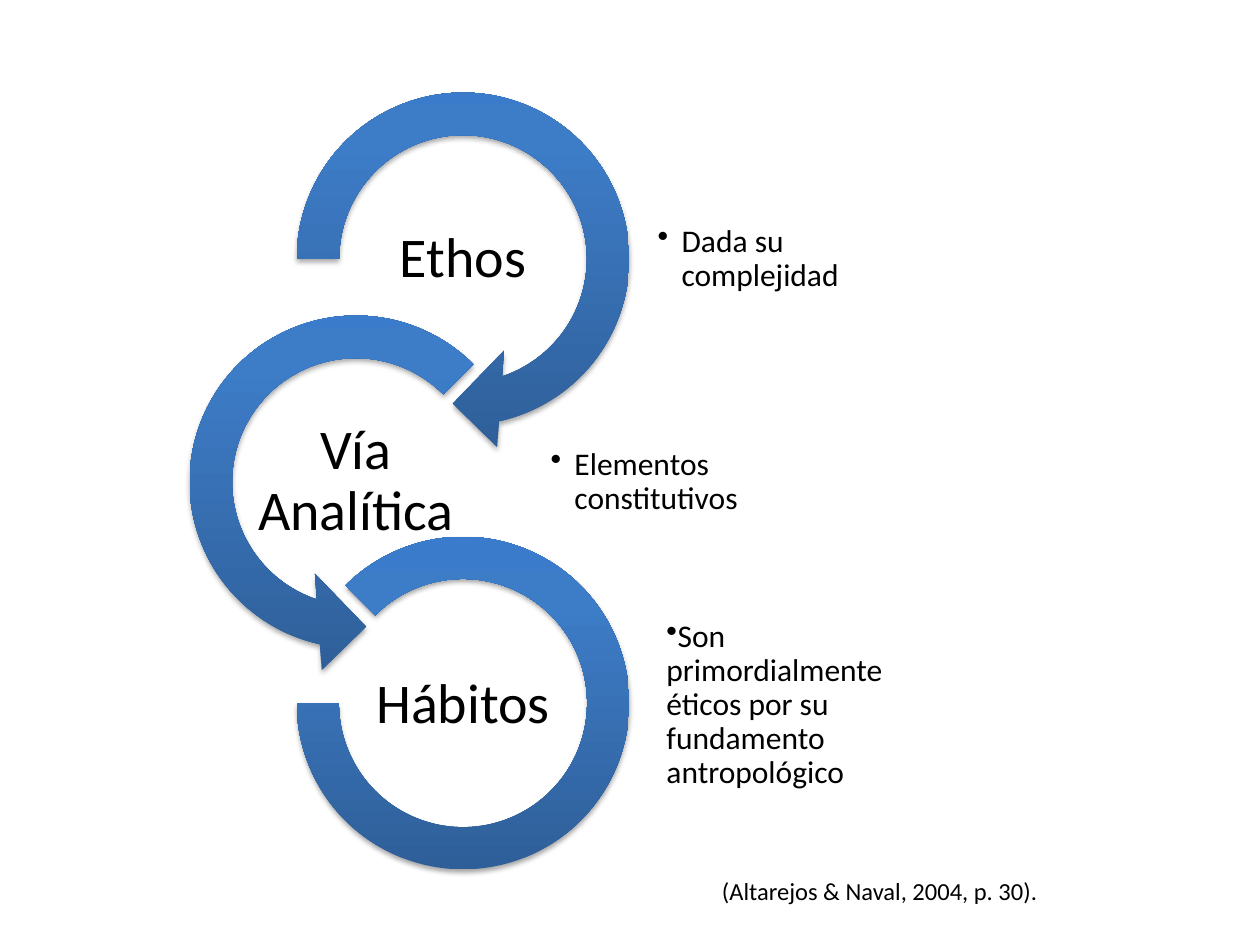
from dataclasses import dataclass

from lxml.etree import SubElement
from pptx import Presentation
from pptx.dml.color import RGBColor
from pptx.enum.shapes import MSO_SHAPE
from pptx.enum.text import MSO_ANCHOR, PP_ALIGN
from pptx.oxml import parse_xml
from pptx.oxml.ns import nsdecls, qn
from pptx.util import Inches, Pt


@dataclass(frozen=True)
class Theme:
    font: str = "Calibri"
    ink: str = "000000"
    gradient: tuple = ((0, "2F5F99"), (80, "3D7CC7"), (100, "3A7CCB"))
    label_size: int = 32
    bullet_size: int = 18
    citation_size: int = 14


THEME = Theme()

# Rows of the chain, in inches: even pitch, middle row shifted left
ROW_TOP, ROW_PITCH = 0.52, 1.77
COLUMN_LEFT, ROW_SHIFT = 2.14, 0.85
RING_SIZE = 3.07
LABEL_OFFSET, LABEL_SIZE = (0.68, 1.11), (1.71, 0.85)
NOTE_TOP, NOTE_HEIGHT = 0.92, 1.23

# Ring kind, adjustments, ring inset, label, note, note (shift, width), (margin, indent)
ROWS = (
    (MSO_SHAPE.CIRCULAR_ARROW, (0.11, 11.423, 45, 108, 0.125), 0,
     "Ethos", "Dada su complejidad", (0, 1.84), (0.19, -0.19)),
    (MSO_SHAPE.LEFT_CIRCULAR_ARROW, (0.11, 11.423, 63, 189, 0.125), 0,
     "Vía Analítica", "Elementos constitutivos", (0, 1.84), (0.19, -0.19)),
    (MSO_SHAPE.BLOCK_ARC, (135, 108, 0.127), 0.215,
     "Hábitos", "Son primordialmente éticos por su fundamento antropológico",
     (-0.05, 1.94), (0.12, 0)),
)


def write_text(frame, text, size, align=PP_ALIGN.LEFT, inset=None, line=None,
               after=None, bullet=False, indents=(0, 0), level=0):
    """Fill a text frame with one formatted paragraph."""
    frame.word_wrap = True
    if inset is not None:
        frame.vertical_anchor = MSO_ANCHOR.MIDDLE
        frame.margin_left = frame.margin_right = Inches(inset)
        frame.margin_top = frame.margin_bottom = Inches(inset)
    para = frame.paragraphs[0]
    para.alignment = align
    para.level = level
    para.space_before = Pt(0)
    if line:
        para.line_spacing = line
    properties = para._p.get_or_add_pPr()
    properties.set("marL", str(Inches(indents[0])))
    properties.set("indent", str(Inches(indents[1])))
    if after:
        spacing = SubElement(properties, qn("a:spcAft"))
        SubElement(spacing, qn("a:spcPct")).set("val", str(after * 1000))
    if bullet:
        SubElement(properties, qn("a:buChar")).set("char", "•")
    else:
        SubElement(properties, qn("a:buNone"))
    span = para.add_run()
    span.text = text
    span.font.name = THEME.font
    span.font.size = Pt(size)
    span.font.color.rgb = RGBColor.from_string(THEME.ink)


def add_ring(page, kind, adjustments, left, top, size):
    """Add a ring with a vertical gradient and a soft shadow below."""
    ring = page.shapes.add_shape(kind, Inches(left), Inches(top), Inches(size), Inches(size))
    for index, value in enumerate(adjustments):
        ring.adjustments[index] = value
    ring.line.fill.background()
    stops = "".join(
        f'<a:gs pos="{position * 1000}"><a:srgbClr val="{color}"/></a:gs>'
        for position, color in THEME.gradient
    )
    ring._element.spPr.find(qn("a:prstGeom")).addnext(parse_xml(
        f'<a:gradFill {nsdecls("a")} rotWithShape="1"><a:gsLst>{stops}</a:gsLst>'
        '<a:lin ang="16200000" scaled="0"/></a:gradFill>'))
    ring._element.spPr.append(parse_xml(
        f'<a:effectLst {nsdecls("a")}><a:outerShdw blurRad="{Pt(3.1)}" dist="{Pt(1.8)}" '
        f'dir="5400000" rotWithShape="0"><a:srgbClr val="{THEME.ink}">'
        '<a:alpha val="35000"/></a:srgbClr></a:outerShdw></a:effectLst>'))


def add_text(page, text, left, top, width, height, **formatting):
    box = page.shapes.add_textbox(Inches(left), Inches(top), Inches(width), Inches(height))
    write_text(box.text_frame, text, **formatting)


def add_row(page, index, kind, adjustments, inset, label, note, note_place, indents):
    """Add one link of the chain: ring, note beside it, label inside it."""
    left = COLUMN_LEFT - ROW_SHIFT * (index % 2)
    top = ROW_TOP + ROW_PITCH * index
    # The closing ring has no arrowhead, so it sits inside the same square
    add_ring(page, kind, adjustments, left + inset, top + inset * 0.93, RING_SIZE - 2 * inset)
    shift, width = note_place
    add_text(page, note, left + RING_SIZE + shift, top + NOTE_TOP, width, NOTE_HEIGHT,
             size=THEME.bullet_size, inset=0.01, line=0.9, after=15,
             bullet=True, indents=indents, level=1)
    add_text(page, label, left + LABEL_OFFSET[0], top + LABEL_OFFSET[1], *LABEL_SIZE,
             size=THEME.label_size, align=PP_ALIGN.CENTER, inset=0.02, line=0.9, after=35)


def add_citation(page, text):
    body = page.placeholders[1]
    body.left, body.top = Inches(5.63), Inches(6.9)
    body.width, body.height = Inches(2.76), Inches(0.47)
    write_text(body.text_frame, text, THEME.citation_size, align=PP_ALIGN.JUSTIFY)


def main():
    deck = Presentation()
    deck.slide_width, deck.slide_height = Inches(10), Inches(7.5)
    page = deck.slides.add_slide(deck.slide_layouts[1])
    title = page.shapes.title._element
    title.getparent().remove(title)

    # Chain of rings, then the source line
    for index, row in enumerate(ROWS):
        add_row(page, index, *row)
    add_citation(page, "(Altarejos & Naval, 2004, p. 30).")
    deck.save("out.pptx")


if __name__ == "__main__":
    main()
